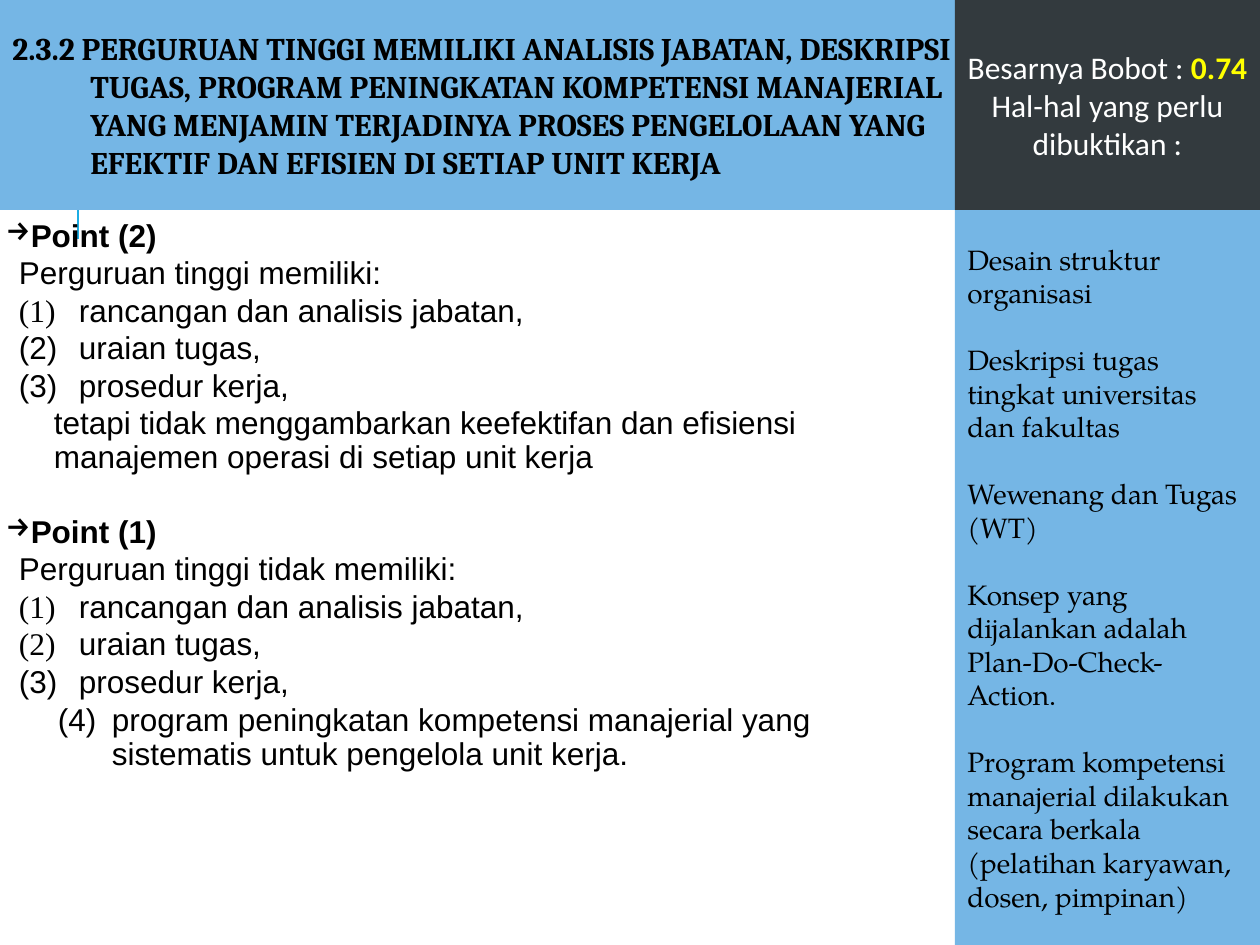
from lxml.etree import SubElement
from pptx import Presentation
from pptx.dml.color import RGBColor
from pptx.enum.shapes import MSO_CONNECTOR as Link, MSO_SHAPE as Shape
from pptx.enum.text import MSO_ANCHOR as Anchor, PP_ALIGN as Align
from pptx.oxml.ns import qn
from pptx.util import Pt

PX = 914400 / 126
BLACK = RGBColor(0x00, 0x00, 0x00)
WHITE = RGBColor(0xFF, 0xFF, 0xFF)
YELLOW = RGBColor(0xFF, 0xFF, 0x00)
BLUE = RGBColor(0x75, 0xB6, 0xE5)
DARK = RGBColor(0x33, 0x3A, 0x3E)
CYAN = RGBColor(0x1C, 0xAD, 0xE4)


def panel(x, y, w, h, fill):
    """Add a plain filled rectangle and return its text frame."""
    box = slide.shapes.add_shape(Shape.RECTANGLE, *(int(n * PX) for n in (x, y, w, h)))
    box.shadow.inherit = False
    box.fill.solid()
    box.fill.fore_color.rgb = fill
    box.line.fill.background()
    frame = box.text_frame
    frame.word_wrap = True
    frame.vertical_anchor = Anchor.MIDDLE
    return frame


def style(font, name, size, color, bold=False):
    font.name, font.size, font.bold = name, Pt(size), bold
    font.color.rgb = color


deck = Presentation()
deck.slide_width = int(1260 * PX)
deck.slide_height = int(945 * PX)
slide = deck.slides.add_slide(deck.slide_layouts[6])

# Accent line behind the title
line = slide.shapes.add_connector(
    Link.STRAIGHT, *(int(n * PX) for n in (78, 239, 78, 113)))
line.line.color.rgb = CYAN
line.line.width = Pt(1.5)
SubElement(line._element.spPr, qn("a:effectLst"))

# Title
para = panel(0, 0, 987, 210, BLUE).paragraphs[0]
para.text = (
    "2.3.2 PERGURUAN TINGGI MEMILIKI ANALISIS JABATAN, DESKRIPSI TUGAS, "
    "PROGRAM PENINGKATAN KOMPETENSI MANAJERIAL YANG MENJAMIN TERJADINYA "
    "PROSES PENGELOLAAN YANG EFEKTIF DAN EFISIEN DI SETIAP UNIT KERJA")
para.alignment = Align.LEFT
style(para.font, "Cambria", 18, BLACK, True)
props = para._p.get_or_add_pPr()
props.set("marL", str(int(78 * PX)))
props.set("indent", str(int(-78 * PX)))

# Evidence list
proofs = [
    "Desain struktur organisasi",
    "Deskripsi tugas tingkat universitas dan fakultas",
    "Wewenang dan Tugas (WT)",
    "Konsep yang dijalankan adalah Plan-Do-Check- Action.",
    "Program kompetensi manajerial dilakukan secara berkala "
    "(pelatihan karyawan, dosen, pimpinan)",
]
frame = panel(955, 210, 305, 735, BLUE)
for i, text in enumerate(proofs):
    para = frame.add_paragraph() if i else frame.paragraphs[0]
    para.text = text
    para.alignment = Align.LEFT
    para.space_before = Pt(19 if i else 0)
    style(para.font, "TeX Gyre Pagella", 16, BLACK)

# Scoring points: kind, number, number font, text
INDENT = {  # left margin and first-line indent in px
    "head": (13, -13), "lead": (13, 0), "item": (73, -60),
    "note": (48, 0), "last": (106, -54),
}
SERIF, SANS = "Times New Roman", "Arial"
points = [
    ("head", "", SANS, "Point (2)"),
    ("lead", "", SANS, "Perguruan tinggi memiliki:"),
    ("item", "(1)", SERIF, "rancangan dan analisis jabatan,"),
    ("item", "(2)", SANS, "uraian tugas,"),
    ("item", "(3)", SANS, "prosedur kerja,"),
    ("note", "", SANS, "tetapi tidak menggambarkan keefektifan dan efisiensi "
                       "manajemen operasi di setiap unit kerja"),
    ("head", "", SANS, "Point (1)"),
    ("lead", "", SANS, "Perguruan tinggi tidak memiliki:"),
    ("item", "(1)", SERIF, "rancangan dan analisis jabatan,"),
    ("item", "(2)", SERIF, "uraian tugas,"),
    ("item", "(3)", SANS, "prosedur kerja,"),
    ("last", "(4)", SANS, "program peningkatan kompetensi manajerial yang "
                          "sistematis untuk pengelola unit kerja."),
]
body = slide.shapes.add_textbox(*(int(n * PX) for n in (0, 214, 945, 731)))
frame = body.text_frame
frame.word_wrap = True
frame.margin_left = frame.margin_right = int(6 * PX)
frame.margin_top = frame.margin_bottom = int(6 * PX)
for i, (kind, mark, face, text) in enumerate(points):
    para = frame.add_paragraph() if i else frame.paragraphs[0]
    para.line_spacing = 0.9
    para.space_after = Pt(2)
    para.space_before = Pt(21 if i and kind == "head" else 0)
    left, first = INDENT[kind]
    props = para._p.get_or_add_pPr()
    props.set("marL", str(int(left * PX)))
    props.set("indent", str(int(first * PX)))
    if kind == "head":
        SubElement(props, qn("a:buChar")).set("char", "→")
    style(para.font, SANS, 18, BLACK, kind == "head")
    if mark:
        run = para.add_run()
        run.text = mark + "\t"
        if face != SANS:
            run.font.name = face
    para.add_run().text = text

# Weight
frame = panel(955, 0, 305, 210, DARK)
para = frame.paragraphs[0]
para.alignment = Align.CENTER
for text, color, bold in (("Besarnya Bobot : ", WHITE, False), ("0.74", YELLOW, True)):
    run = para.add_run()
    run.text = text
    style(run.font, "Calibri", 18, color, bold)
para = frame.add_paragraph()
para.text = "Hal-hal yang perlu dibuktikan :"
para.alignment = Align.CENTER
style(para.font, "Calibri", 18, WHITE)

deck.save("out.pptx")
